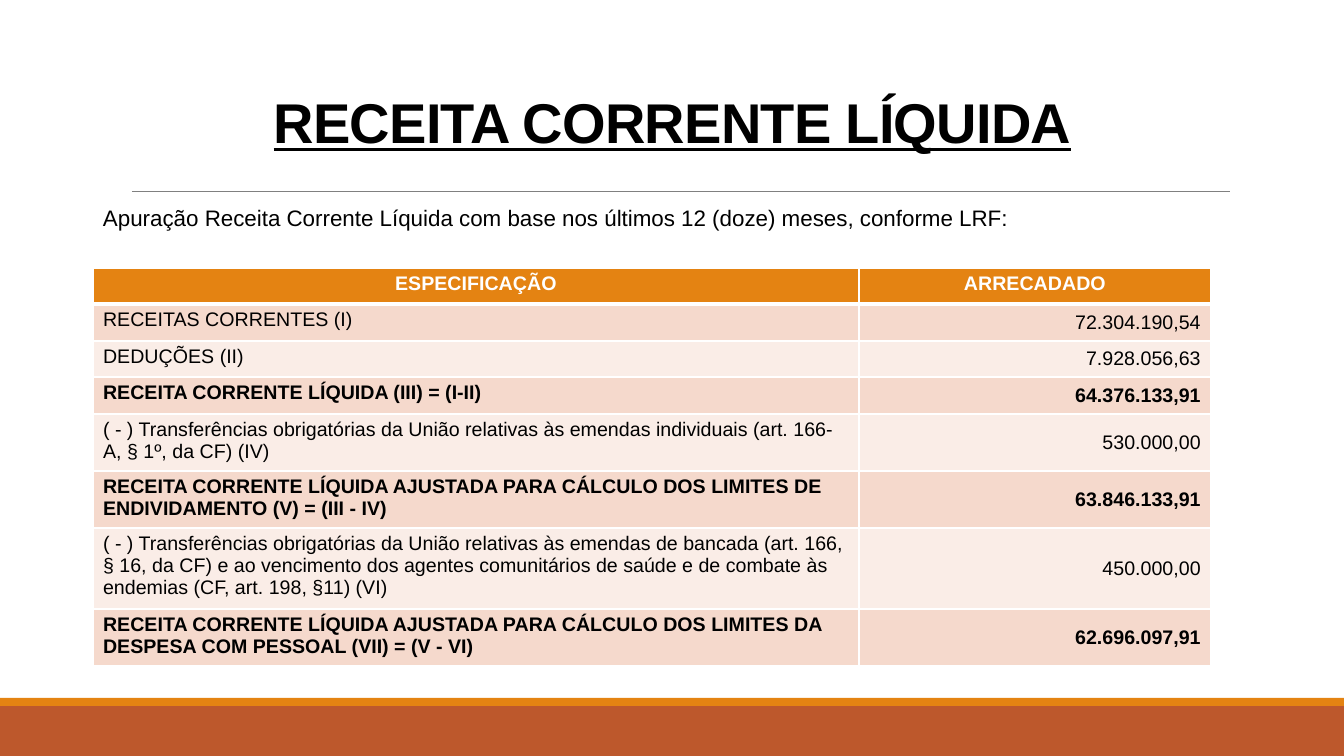
from dataclasses import dataclass
from typing import Any

from lxml.etree import SubElement
from pptx import Presentation
from pptx.dml.color import RGBColor
from pptx.enum.shapes import MSO_CONNECTOR, MSO_SHAPE
from pptx.enum.text import MSO_ANCHOR as Anchor, MSO_AUTO_SIZE as AutoSize, PP_ALIGN as Align
from pptx.oxml import parse_xml
from pptx.oxml.ns import nsdecls, qn
from pptx.util import Emu, Pt

EMU_PER_PX = 914400 / 100.8
FONT = "Arial"
BLACK, WHITE = "000000", "FFFFFF"
ORANGE, RUST, GRAY = "E48312", "BD582C", "808080"
STRIPES = ("F5D9CC", "FAEDE7")


@dataclass(frozen=True)
class Band:
    top: int
    height: int
    color: str


@dataclass(frozen=True)
class Revenue:
    label: str
    amount: str
    height: int
    bold: bool = False


BANDS = (Band(706, 50, RUST), Band(698, 8, ORANGE))
HEADINGS = ("ESPECIFICAÇÃO", "ARRECADADO")
HEADING_HEIGHT = 36
COLUMN_WIDTHS = (766, 352)
REVENUES = (
    Revenue("RECEITAS CORRENTES (I)", "72.304.190,54", 37),
    Revenue("DEDUÇÕES (II)", "7.928.056,63", 36),
    Revenue("RECEITA CORRENTE LÍQUIDA (III) = (I-II)", "64.376.133,91", 37, True),
    Revenue("( - ) Transferências obrigatórias da União relativas às emendas individuais "
            "(art. 166-A, § 1º, da CF) (IV)", "530.000,00", 57),
    Revenue("RECEITA CORRENTE LÍQUIDA AJUSTADA PARA CÁLCULO DOS LIMITES DE "
            "ENDIVIDAMENTO (V) = (III - IV)", "63.846.133,91", 57, True),
    Revenue("( - ) Transferências obrigatórias da União relativas às emendas de bancada "
            "(art. 166, § 16, da CF) e ao vencimento dos agentes comunitários de saúde e de "
            "combate às endemias (CF, art. 198, §11) (VI)", "450.000,00", 81),
    Revenue("RECEITA CORRENTE LÍQUIDA AJUSTADA PARA CÁLCULO DOS LIMITES DA "
            "DESPESA COM PESSOAL (VII) = (V - VI)", "62.696.097,91", 57, True),
)


def px(length: int) -> Emu:
    return Emu(round(length * EMU_PER_PX))


def rgb(color: str) -> RGBColor:
    return RGBColor.from_string(color)


def place(shape: Any, left: int, top: int, width: int, height: int) -> None:
    shape.left, shape.top = px(left), px(top)
    shape.width, shape.height = px(width), px(height)


def add_run(paragraph: Any, text: str, size: int, color: str, bold: bool = False) -> Any:
    run = paragraph.add_run()
    run.text = text
    run.font.name = FONT
    run.font.size = Pt(size)
    run.font.bold = bold
    run.font.color.rgb = rgb(color)
    return run


def draw_band(slide: Any, band: Band) -> None:
    strip = slide.shapes.add_shape(
        MSO_SHAPE.RECTANGLE, px(0), px(band.top), px(1344), px(band.height))
    strip.shadow.inherit = False
    strip.fill.solid()
    strip.fill.fore_color.rgb = rgb(band.color)
    strip.line.fill.background()


def draw_rule(slide: Any) -> None:
    rule = slide.shapes.add_connector(
        MSO_CONNECTOR.STRAIGHT, px(132), px(191), px(1230), px(191))
    rule.line.color.rgb = rgb(GRAY)
    rule.line.width = Pt(0.5)
    SubElement(rule._element.spPr, qn("a:effectLst"))


def write_title(title: Any) -> None:
    place(title, 118, 23, 1109, 137)
    title.text_frame.auto_size = AutoSize.NONE
    title.text_frame.vertical_anchor = Anchor.BOTTOM
    paragraph = title.text_frame.paragraphs[0]
    paragraph.alignment = Align.CENTER
    paragraph.line_spacing = 0.85
    run = add_run(paragraph, "RECEITA CORRENTE LÍQUIDA", 40, BLACK, True)
    run.font.underline = True
    run.font._element.set("spc", "-50")


def write_intro(intro: Any) -> None:
    place(intro, 93, 202, 1159, 42)
    frame = intro.text_frame
    frame.auto_size = AutoSize.NONE
    frame.vertical_anchor = Anchor.TOP
    frame.margin_left = frame.margin_right = 0
    paragraph = frame.paragraphs[0]
    paragraph.line_spacing = 0.9
    paragraph.space_before, paragraph.space_after = Pt(12), Pt(2)
    properties = paragraph._p.get_or_add_pPr()
    properties.set("marL", str(px(10)))
    properties.set("indent", "0")
    SubElement(properties, qn("a:buNone"))
    add_run(paragraph, "Apuração Receita Corrente Líquida com base nos últimos 12 (doze) meses, "
            "conforme LRF:", 16, BLACK)


def border_cell(cell: Any, top: int, bottom: int) -> None:
    properties = cell._tc.get_or_add_tcPr()
    for position, (side, points) in enumerate(
            (("L", 1), ("R", 1), ("T", top), ("B", bottom))):
        properties.insert(position, parse_xml(
            f'<a:ln{side} {nsdecls("a")} w="{Pt(points)}"><a:solidFill>'
            f'<a:srgbClr val="{WHITE}"/></a:solidFill></a:ln{side}>'))


def fill_cell(cell: Any, text: str, fill: str, color: str, bold: bool,
              align: Align, anchor: Anchor, top: int = 1, bottom: int = 1) -> None:
    cell.fill.solid()
    cell.fill.fore_color.rgb = rgb(fill)
    cell.vertical_anchor = anchor
    paragraph = cell.text_frame.paragraphs[0]
    paragraph.alignment = align
    add_run(paragraph, text, 14, color, bold)
    border_cell(cell, top, bottom)


def draw_table(slide: Any) -> None:
    heights = [HEADING_HEIGHT, *(revenue.height for revenue in REVENUES)]
    table = slide.shapes.add_table(
        len(heights), len(COLUMN_WIDTHS), px(93), px(268),
        px(sum(COLUMN_WIDTHS)), px(sum(heights))).table
    for column, width in zip(table.columns, COLUMN_WIDTHS):
        column.width = px(width)
    for row, height in zip(table.rows, heights):
        row.height = px(height)
    for index, heading in enumerate(HEADINGS):
        fill_cell(table.cell(0, index), heading, ORANGE, WHITE, True,
                  Align.CENTER, Anchor.TOP, bottom=3)
    for index, revenue in enumerate(REVENUES, start=1):
        stripe = STRIPES[(index - 1) % 2]
        top = 3 if index == 1 else 1
        fill_cell(table.cell(index, 0), revenue.label, stripe, BLACK, revenue.bold,
                  Align.LEFT, Anchor.TOP, top)
        fill_cell(table.cell(index, 1), revenue.amount, stripe, BLACK, revenue.bold,
                  Align.RIGHT, Anchor.MIDDLE, top)


def main() -> None:
    deck = Presentation()
    deck.slide_width, deck.slide_height = px(1344), px(756)
    slide = deck.slides.add_slide(deck.slide_layouts[1])
    for band in BANDS:
        draw_band(slide, band)
    draw_rule(slide)
    write_title(slide.shapes.title)
    write_intro(slide.placeholders[1])
    draw_table(slide)
    deck.save("out.pptx")


if __name__ == "__main__":
    main()
